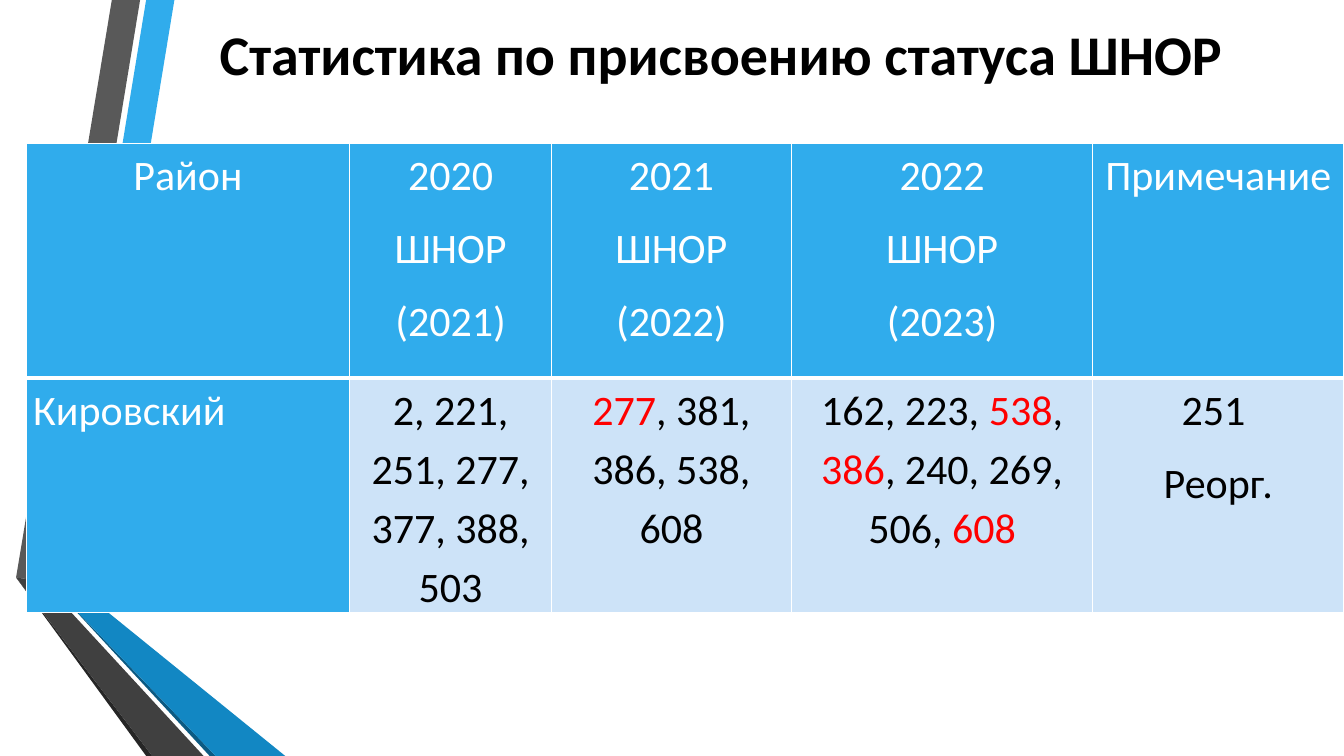
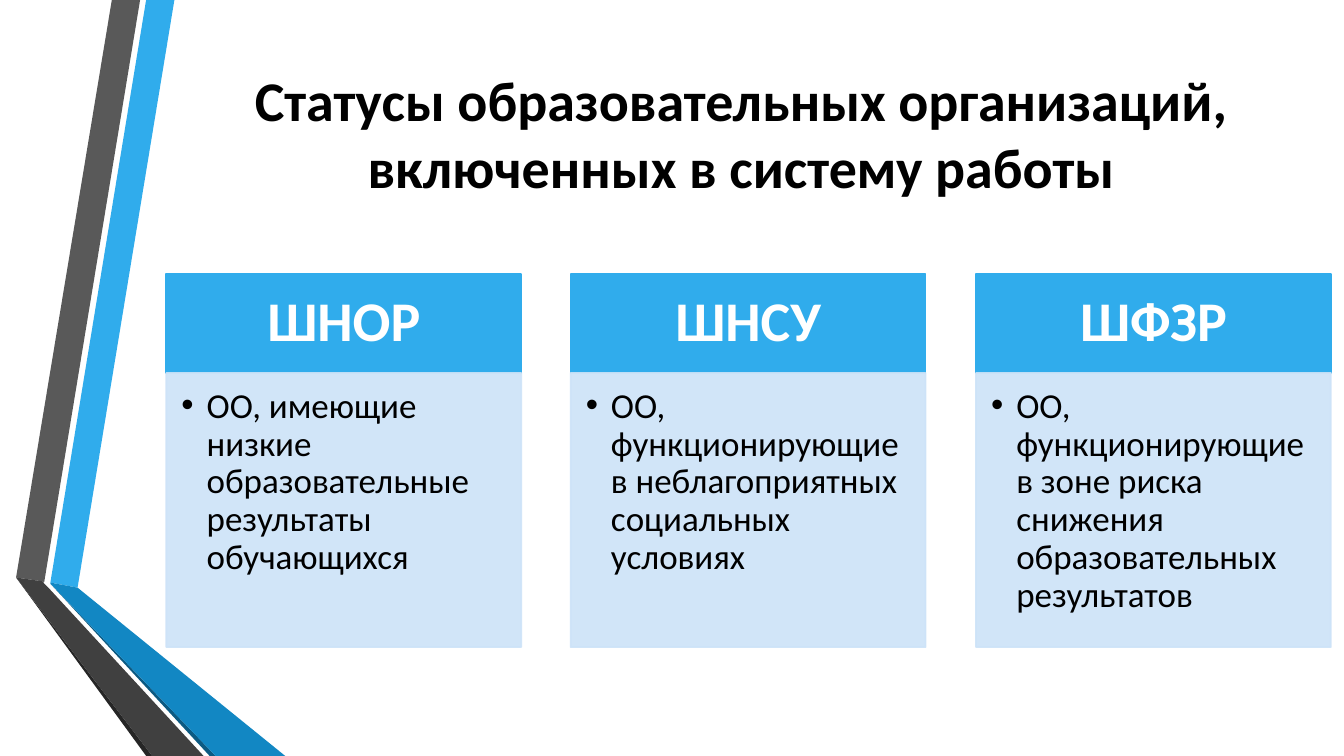
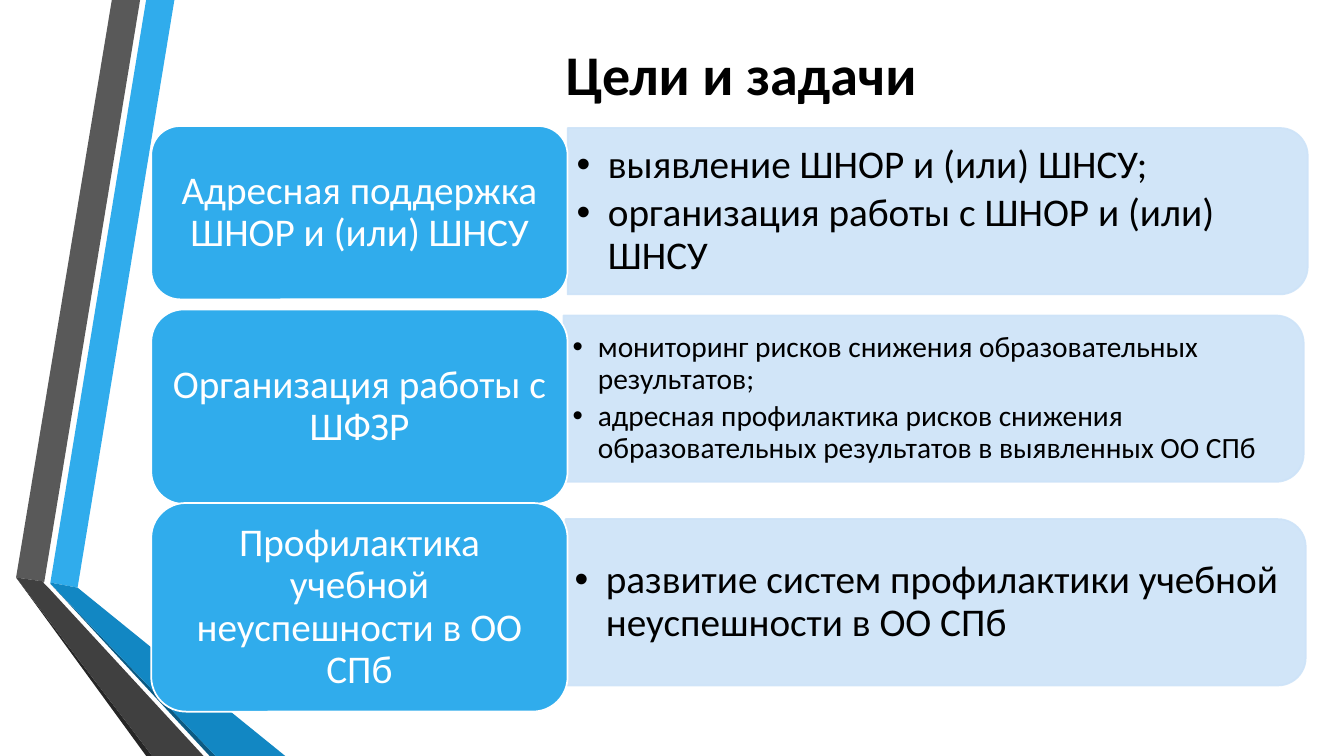
from lxml import etree
from pptx import Presentation
from pptx.dml.color import RGBColor
from pptx.enum.shapes import MSO_SHAPE
from pptx.enum.text import MSO_ANCHOR, PP_ALIGN
from pptx.oxml.ns import qn
from pptx.util import Pt

PX = 9144  # one px is a hundredth of an inch
SLIDE_SIZE = (1333, 750)
FONT = "Calibri"
BLUE, PALE, WHITE, BLACK, RED = "30ACEC", "CDE3F8", "FFFFFF", "000000", "FF0000"
LEFT, CENTER = PP_ALIGN.LEFT, PP_ALIGN.CENTER
TOP, MIDDLE = MSO_ANCHOR.TOP, MSO_ANCHOR.MIDDLE
RECTANGLE, ROUNDED = MSO_SHAPE.RECTANGLE, MSO_SHAPE.ROUNDED_RECTANGLE
TWO_ROUNDED = MSO_SHAPE.ROUND_2_SAME_RECTANGLE

RIBBONS = [
    (BLUE, [(50, 578), (77, 583), (173, 0), (145, 0)]),
    ("595959", [(139, 0), (111, 0), (16, 573), (44, 577)]),
    ("262626", [(16, 573), (145, 750), (151, 750)]),
    ("0C5A82", [(50, 579), (208, 750), (214, 750)]),
    ("1287C3", [(50, 579), (214, 750), (283, 750), (77, 583), (50, 578)]),
    ("404040", [(202, 750), (48, 583), (43, 578), (44, 577), (16, 573), (151, 750)]),
]
TITLE = {"size": 40, "bold": True, "align": CENTER}
CARD_HEAD = {"size": 40, "bold": True, "color": WHITE, "align": CENTER, "line_spacing": 0.9}
CARD_BODY = {"size": 25, "line_spacing": 0.9, "space_after": 4, "hanging": 25}
GOAL_LABEL = {"size": 28, "color": WHITE, "align": CENTER, "line_spacing": 0.9}
TABLE_TEXT = {"size": 30, "line_spacing": 1.15, "space_after": 10}

COLUMN_WIDTHS = [321, 200, 238, 299, 249]
HEADER = [
    ["Район"],
    ["2020", "ШНОР", "(2021)"],
    ["2021", "ШНОР", "(2022)"],
    ["2022", "ШНОР", "(2023)"],
    ["Примечание"],
]
DISTRICT = [
    ["Кировский"],
    ["2, 221, 251, 277, 377, 388, 503"],
    [[("277", RED), (", 381, 386, 538, 608", BLACK)]],
    [[("162, 223, ", BLACK), ("538", RED), (", ", BLACK), ("386", RED),
      (", 240, 269, 506, ", BLACK), ("608", RED)]],
    ["251 ", "Реорг."],
]
CARDS = [
    ("ШНОР", "ОО, имеющие низкие образовательные результаты обучающихся"),
    ("ШНСУ", "ОО, функционирующие в неблагоприятных социальных условиях"),
    ("ШФЗР", "ОО, функционирующие в зоне риска снижения образовательных результатов"),
]
# label, its top and height, panel left and top, bullet size and indent, bullets
GOALS = [
    ("Адресная поддержка ШНОР и (или) ШНСУ", 125, 172, 563, 127, 28, 31,
     ["выявление ШНОР и (или) ШНСУ;", "организация работы с ШНОР и (или) ШНСУ"]),
    ("Организация работы с ШФЗР", 307, 193, 559, 313, 21, 25,
     ["мониторинг рисков снижения образовательных результатов;",
      "адресная профилактика рисков снижения образовательных результатов "
      "в выявленных ОО СПб"]),
    ("Профилактика учебной неуспешности в ОО СПб", 499, 207, 561, 515, 28, 31,
     ["развитие систем профилактики учебной неуспешности в ОО СПб"]),
]


def rgb(color):
    return RGBColor.from_string(color)


def emu(*lengths):
    return [round(length * PX) for length in lengths]


def set_attributes(target, values):
    for name, value in values.items():
        setattr(target, name, value)


def set_margins(target, margins):
    names = ("margin_left", "margin_top", "margin_right", "margin_bottom")
    set_attributes(target, dict(zip(names, emu(*margins))))


def add_bullet(paragraph, hanging):
    properties = paragraph._p.get_or_add_pPr()
    indent, = emu(hanging)
    properties.set("marL", str(indent))
    properties.set("indent", str(-indent))
    etree.SubElement(properties, qn("a:buFont")).set("typeface", "Arial")
    etree.SubElement(properties, qn("a:buChar")).set("char", "•")


def write_text(frame, paragraphs, style):
    """Fill a frame; a paragraph is a string or a list of (text, color) runs."""
    color = style.get("color", BLACK)
    for index, content in enumerate(paragraphs):
        paragraph = frame.paragraphs[0] if index == 0 else frame.add_paragraph()
        set_attributes(paragraph, {
            "alignment": style.get("align", LEFT),
            "line_spacing": style.get("line_spacing", 1.0),
            "space_after": Pt(style.get("space_after", 0)),
        })
        if "hanging" in style:
            add_bullet(paragraph, style["hanging"])
        runs = [(content, color)] if isinstance(content, str) else content
        for text, run_color in runs:
            run = paragraph.add_run()
            run.text = text
            set_attributes(run.font, {
                "name": FONT, "size": Pt(style["size"]), "bold": style.get("bold", False),
            })
            run.font.color.rgb = rgb(run_color)


def fill_frame(shape, paragraphs, style, margins, anchor=MIDDLE):
    frame = shape.text_frame
    set_attributes(frame, {"word_wrap": True, "vertical_anchor": anchor})
    set_margins(frame, margins)
    write_text(frame, paragraphs, style)


def add_text(slide, box, paragraphs, style, margins):
    fill_frame(slide.shapes.add_textbox(*emu(*box)), paragraphs, style, margins)


def paint(shape, fill, line=None, opacity=100):
    shape.shadow.inherit = False
    shape.fill.solid()
    shape.fill.fore_color.rgb = rgb(fill)
    if line is None:
        shape.line.fill.background()
    else:
        shape.line.color.rgb = rgb(line)
        shape.line.width = Pt(1.25)
    if opacity < 100:
        for color in shape._element.spPr.iter(qn("a:srgbClr")):
            etree.SubElement(color, qn("a:alpha")).set("val", str(opacity * 1000))


def add_block(slide, kind, box, fill, line, opacity=100):
    shape = slide.shapes.add_shape(kind, *emu(*box))
    paint(shape, fill, line, opacity)
    return shape


def add_ribbons(slide):
    for color, points in RIBBONS:
        builder = slide.shapes.build_freeform(*points[0], scale=PX)
        builder.add_line_segments(points[1:], close=True)
        paint(builder.convert_to_shape(), color)


def new_slide(presentation, title, title_box):
    slide = presentation.slides.add_slide(presentation.slide_layouts[6])
    add_ribbons(slide)
    add_text(slide, title_box, [title], TITLE, (10, 5, 10, 5))
    return slide


def set_borders(cell, bottom_width):
    properties = cell._tc.get_or_add_tcPr()
    for side, width in (("L", 1), ("R", 1), ("T", 1), ("B", bottom_width)):
        border = etree.SubElement(properties, qn("a:ln" + side), w=str(Pt(width)))
        fill = etree.SubElement(border, qn("a:solidFill"))
        etree.SubElement(fill, qn("a:srgbClr"), val=WHITE)


def fill_cell(cell, paragraphs, is_header, is_first):
    on_blue = is_header or is_first
    set_margins(cell, (7, 0, 7, 0))
    set_borders(cell, 3 if is_header else 1)
    cell.fill.solid()
    cell.fill.fore_color.rgb = rgb(BLUE if on_blue else PALE)
    write_text(cell.text_frame, paragraphs, {
        **TABLE_TEXT,
        "color": WHITE if on_blue else BLACK,
        "align": LEFT if is_first and not is_header else CENTER,
    })


def add_status_table(slide):
    rows = [HEADER, DISTRICT]
    box = emu(26, 142, sum(COLUMN_WIDTHS), 466)
    table = slide.shapes.add_table(len(rows), len(COLUMN_WIDTHS), *box).table
    for column, width in zip(table.columns, COLUMN_WIDTHS):
        column.width, = emu(width)
    for row_index, row in enumerate(rows):
        for column_index, paragraphs in enumerate(row):
            fill_cell(table.cell(row_index, column_index), paragraphs,
                      row_index == 0, column_index == 0)


def add_card(slide, left, heading, body):
    head = add_block(slide, RECTANGLE, (left, 272, 352, 98), BLUE, BLUE)
    fill_frame(head, [heading], CARD_HEAD, (31, 18, 31, 18))
    panel = add_block(slide, RECTANGLE, (left, 370, 352, 272), PALE, PALE, 90)
    fill_frame(panel, [body], CARD_BODY, (15, 15, 19, 22), TOP)


def add_goal(slide, label, top, height, panel_left, panel_top, size, hanging, bullets):
    width, depth = 734, 165
    turn = (width - depth) / 2  # the panel is an upright shape turned by 90 degrees
    panel = add_block(slide, TWO_ROUNDED,
                      (panel_left + turn, panel_top - turn, depth, width), PALE, PALE, 90)
    panel.rotation = 90
    add_text(slide, (panel_left, panel_top + 8, width - 8, depth - 16), bullets,
             {"size": size, "line_spacing": 0.9, "space_after": 4, "hanging": hanging},
             (9, 4, 9, 4))
    block = add_block(slide, ROUNDED, (150, top, 413, height), BLUE, WHITE)
    fill_frame(block, [label], GOAL_LABEL, (12, 6, 12, 6))


def main():
    presentation = Presentation()
    presentation.slide_width, presentation.slide_height = emu(*SLIDE_SIZE)

    slide = new_slide(presentation, "Статистика по присвоению статуса ШНОР",
                      (167, 0, 1096, 106))
    add_status_table(slide)

    slide = new_slide(presentation,
                      "Статусы образовательных организаций, включенных в систему работы",
                      (162, 21, 1146, 221))
    for index, (heading, body) in enumerate(CARDS):
        add_card(slide, 165 + index * 803 // 2, heading, body)

    slide = new_slide(presentation, "Цели и задачи", (162, 21, 1146, 104))
    for goal in GOALS:
        add_goal(slide, *goal)

    presentation.save("out.pptx")


if __name__ == "__main__":
    main()
